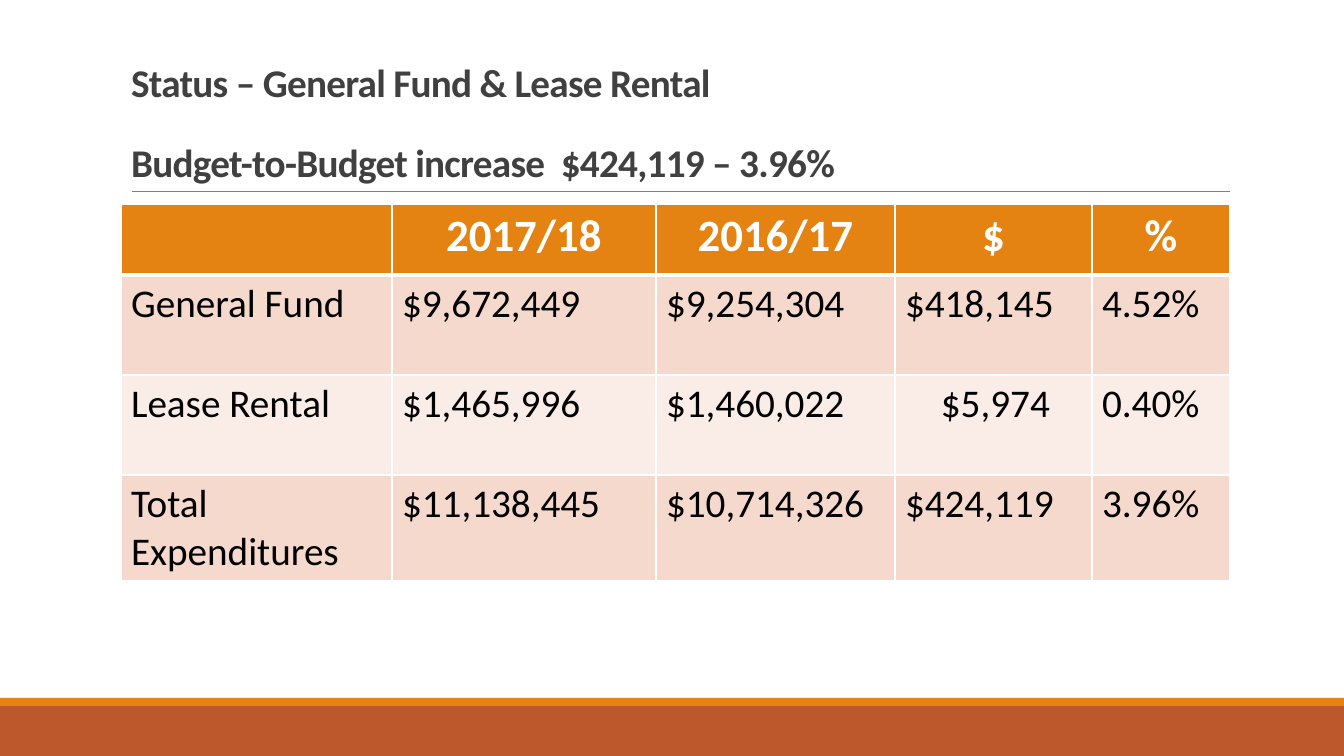
import pptx
import pptx.dml.color
import pptx.enum.shapes
import pptx.enum.text
import pptx.oxml
import pptx.oxml.ns
import pptx.util

PX = 914400 / 100.8
ALIGN = pptx.enum.text.PP_ALIGN
COLORS = {
    "bar": "BD582C",
    "accent": "E48312",
    "rule": "808080",
    "heading": "404040",
    "body": "000000",
    "white": "FFFFFF",
    "band_dark": "F5D9CC",
    "band_light": "FAEDE7",
}


def px(length):
    return pptx.util.Emu(round(length * PX))


def rgb(name):
    return pptx.dml.color.RGBColor.from_string(COLORS[name])


def write(paragraph, text, size=28, color="body", bold=False, align=ALIGN.LEFT,
          font="Calibri", leading=None, before=0, tracking=None):
    paragraph.alignment = align
    paragraph.space_before = pptx.util.Pt(before)
    if leading:
        paragraph.line_spacing = leading
    run = paragraph.add_run()
    run.text = text
    run.font.name = font
    run.font.size = pptx.util.Pt(size)
    run.font.bold = bold
    run.font.color.rgb = rgb(color)
    if tracking:
        run.font._element.set("spc", str(round(tracking * 100)))


class BudgetSlide:
    def __init__(self, deck, colors):
        self.colors = colors
        self.slide = deck.slides.add_slide(deck.slide_layouts[5])
        self.shapes = self.slide.shapes

    def bar(self, left, top, width, height, color):
        band = self.shapes.add_shape(pptx.enum.shapes.MSO_SHAPE.RECTANGLE,
                                     px(left), px(top), px(width), px(height))
        band.shadow.inherit = False
        band.fill.solid()
        band.fill.fore_color.rgb = rgb(color)
        band.line.fill.background()

    def rule(self, left, right, y, color, weight):
        divider = self.shapes.add_connector(pptx.enum.shapes.MSO_CONNECTOR.STRAIGHT,
                                            px(left), px(y), px(right), px(y))
        divider.line.color.rgb = rgb(color)
        divider.line.width = pptx.util.Pt(weight)
        divider._element.spPr.append(pptx.oxml.parse_xml(
            f"<a:effectLst {pptx.oxml.ns.nsdecls('a')}/>"))

    def title(self, left, top, width, height, lines, gap):
        heading = self.shapes.title
        heading.left, heading.top = px(left), px(top)
        heading.width, heading.height = px(width), px(height)
        frame = heading.text_frame
        frame.word_wrap = True
        frame.auto_size = pptx.enum.text.MSO_AUTO_SIZE.NONE
        frame.vertical_anchor = pptx.enum.text.MSO_ANCHOR.BOTTOM
        for index, line in enumerate(lines):
            paragraph = frame.add_paragraph() if index else frame.paragraphs[0]
            write(paragraph, line, color="heading", bold=True, leading=0.85,
                  before=gap if index else 0, tracking=-0.5)

    def borders(self, cell, top, bottom):
        properties = cell._tc.get_or_add_tcPr()
        weights = {"lnL": 1, "lnR": 1, "lnT": top, "lnB": bottom}
        for position, (side, weight) in enumerate(weights.items()):
            properties.insert(position, pptx.oxml.parse_xml(
                f"<a:{side} {pptx.oxml.ns.nsdecls('a')} w=\"{pptx.util.Pt(weight)}\">"
                f"<a:solidFill><a:srgbClr val=\"{self.colors['white']}\"/></a:solidFill>"
                f"</a:{side}>"))

    def table(self, left, top, widths, heights, rows):
        budget = self.shapes.add_table(len(rows), len(widths), px(left), px(top),
                                       px(sum(widths)), px(sum(heights))).table
        for column, width in zip(budget.columns, widths):
            column.width = px(width)
        for r, (values, height) in enumerate(zip(rows, heights)):
            budget.rows[r].height = px(height)
            fill = "accent" if r == 0 else ("band_dark" if r % 2 else "band_light")
            for c, value in enumerate(values):
                cell = budget.cell(r, c)
                cell.fill.solid()
                cell.fill.fore_color.rgb = rgb(fill)
                self.borders(cell, top=3 if r == 1 else 1, bottom=3 if r == 0 else 1)
                if not value:
                    continue
                paragraph = cell.text_frame.paragraphs[0]
                if r == 0:
                    write(paragraph, value, size=32, color="white", bold=True,
                          align=ALIGN.CENTER)
                else:
                    write(paragraph, value)
        return budget


def main():
    deck = pptx.Presentation()
    deck.slide_width, deck.slide_height = px(1344), px(756)
    page = BudgetSlide(deck, COLORS)
    page.bar(0, 706, 1344, 50, "bar")
    page.bar(0, 698, 1344, 8, "accent")
    page.rule(132, 1230, 191, "rule", 0.5)
    page.title(121, 31, 1109, 160, [
        "Status – General Fund & Lease Rental",
        "Budget-to-Budget increase  $424,119 – 3.96%",
    ], gap=29)
    budget = page.table(121, 204, [271, 264, 239, 197, 138], [71, 100, 100, 105], [
        ["", "2017/18", "2016/17", "$", "%"],
        ["General Fund", "$9,672,449", "$9,254,304", "$418,145", "4.52%"],
        ["Lease Rental", "$1,465,996", "$1,460,022", "$5,974", "0.40%"],
        ["Total Expenditures", "$11,138,445", "$10,714,326", "$424,119", "3.96%"],
    ])
    lease_increase = budget.cell(2, 3)
    lease_increase.margin_left = px(46)
    deck.save("out.pptx")


if __name__ == "__main__":
    main()
